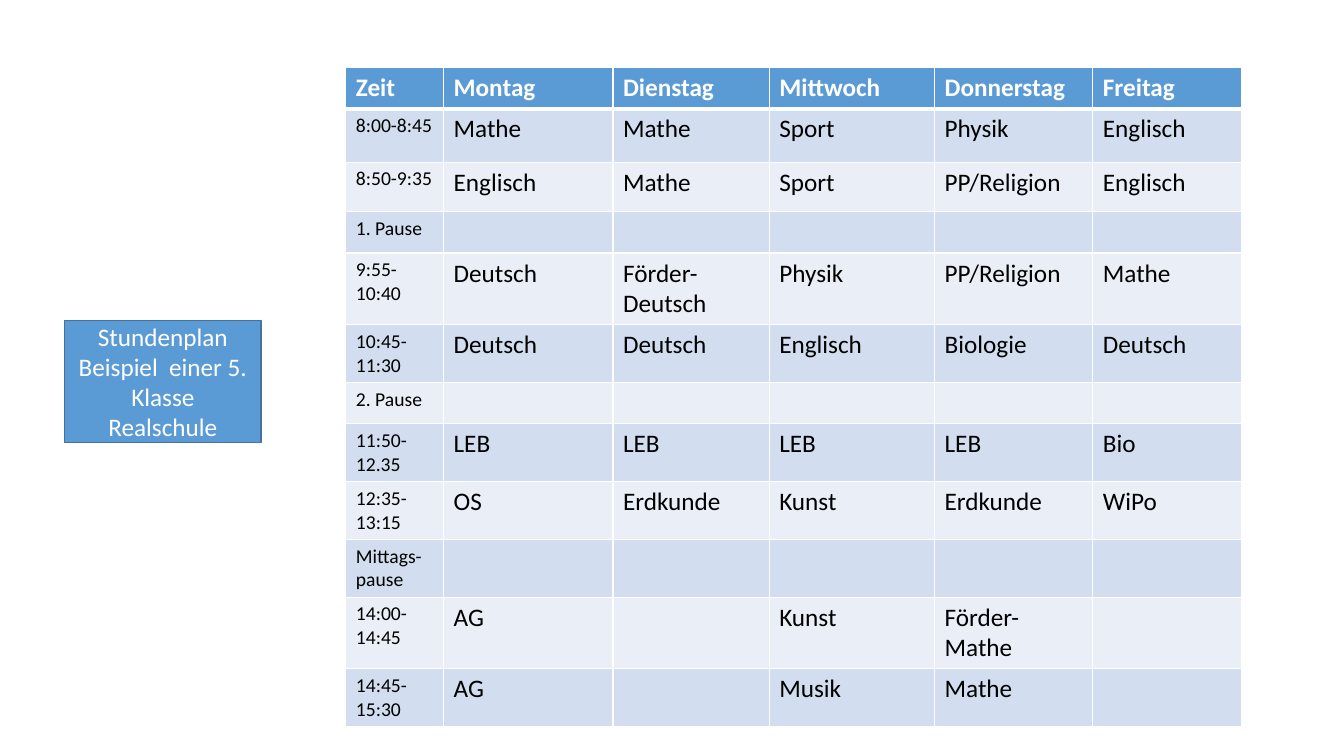
"""Build a weekly school timetable slide with a title box."""
from dataclasses import dataclass

import lxml.etree
import pptx
import pptx.dml.color
import pptx.enum.shapes
import pptx.enum.text
import pptx.oxml.ns
import pptx.util

Inches = pptx.util.Inches


@dataclass(frozen=True)
class Theme:
    font: str = "Calibri"
    accent: str = "5B9BD5"
    outline: str = "43739E"
    bands: tuple[str, str] = ("D2DEEF", "EAEFF7")
    light: str = "FFFFFF"
    dark: str = "000000"
    body_size: int = 18
    time_size: int = 14
    thin: int = 1
    thick: int = 3


@dataclass(frozen=True)
class Period:
    time: str
    subjects: tuple[str, ...] = ("",) * 5
    height: float = 0.41


THEME = Theme()
DAYS = ("Zeit", "Montag", "Dienstag", "Mittwoch", "Donnerstag", "Freitag")
COLUMN_WIDTHS = (0.97, 1.68, 1.55, 1.64, 1.57, 1.48)
HEADER_HEIGHT = 0.41
PERIODS = (
    Period("8:00-8:45", ("Mathe", "Mathe", "Sport", "Physik", "Englisch"), 0.53),
    Period("8:50-9:35", ("Englisch", "Mathe", "Sport", "PP/Religion", "Englisch"), 0.49),
    Period("1. Pause"),
    Period("9:55-10:40", ("Deutsch", "Förder-Deutsch", "Physik", "PP/Religion", "Mathe"), 0.53),
    Period("10:45-11:30", ("Deutsch", "Deutsch", "Englisch", "Biologie", "Deutsch")),
    Period("2. Pause"),
    Period("11:50-12.35", ("LEB", "LEB", "LEB", "LEB", "Bio")),
    Period("12:35-13:15", ("OS", "Erdkunde", "Kunst", "Erdkunde", "WiPo")),
    Period("Mittags-pause"),
    Period("14:00-14:45", ("AG", "", "Kunst", "Förder-Mathe", "")),
    Period("14:45-15:30", ("AG", "", "Musik", "Mathe", "")),
)


def rgb(value: str) -> pptx.dml.color.RGBColor:
    return pptx.dml.color.RGBColor.from_string(value)


def add_run(p, text: str, size: int, color: str, bold: bool = False) -> None:
    r = p.add_run()
    r.text = text
    r.font.name = THEME.font
    r.font.size = pptx.util.Pt(size)
    r.font.bold = bold
    r.font.color.rgb = rgb(color)


def add_borders(cell, top: int, bottom: int) -> None:
    qn = pptx.oxml.ns.qn
    tc_pr = cell._tc.get_or_add_tcPr()
    widths = {"a:lnL": THEME.thin, "a:lnR": THEME.thin, "a:lnT": top, "a:lnB": bottom}
    for tag, width in widths.items():
        ln = lxml.etree.SubElement(tc_pr, qn(tag), w=str(pptx.util.Pt(width)))
        fill = lxml.etree.SubElement(ln, qn("a:solidFill"))
        lxml.etree.SubElement(fill, qn("a:srgbClr"), val=THEME.light)


def fill_cell(cell, text: str, row: int, col: int) -> None:
    header = row == 0
    add_borders(
        cell,
        top=THEME.thick if row == 1 else THEME.thin,
        bottom=THEME.thick if header else THEME.thin,
    )
    cell.fill.solid()
    cell.fill.fore_color.rgb = rgb(THEME.accent if header else THEME.bands[(row - 1) % 2])
    if text:
        size = THEME.time_size if col == 0 and not header else THEME.body_size
        color = THEME.light if header else THEME.dark
        add_run(cell.text_frame.paragraphs[0], text, size, color, header)


def add_timetable(s) -> None:
    rows = [DAYS] + [(period.time, *period.subjects) for period in PERIODS]
    heights = [HEADER_HEIGHT] + [period.height for period in PERIODS]
    table = s.shapes.add_table(
        len(rows), len(DAYS), Inches(3.43), Inches(0.67),
        Inches(sum(COLUMN_WIDTHS)), Inches(sum(heights)),
    ).table
    for column, width in zip(table.columns, COLUMN_WIDTHS):
        column.width = Inches(width)
    for i, (texts, height) in enumerate(zip(rows, heights)):
        table.rows[i].height = Inches(height)
        for j, text in enumerate(texts):
            fill_cell(table.cell(i, j), text, i, j)


def add_title_box(s) -> None:
    sp = s.shapes.add_shape(
        pptx.enum.shapes.MSO_SHAPE.RECTANGLE,
        Inches(0.64), Inches(3.18), Inches(1.95), Inches(1.21),
    )
    sp.shadow.inherit = False
    sp.fill.solid()
    sp.fill.fore_color.rgb = rgb(THEME.accent)
    sp.line.color.rgb = rgb(THEME.outline)
    sp.line.width = pptx.util.Pt(THEME.thin)
    tf = sp.text_frame
    tf.word_wrap = True
    tf.vertical_anchor = pptx.enum.text.MSO_ANCHOR.MIDDLE
    p = tf.paragraphs[0]
    p.alignment = pptx.enum.text.PP_ALIGN.CENTER
    add_run(p, "Stundenplan Beispiel  einer 5. Klasse Realschule", THEME.body_size, THEME.light)


def main() -> None:
    prs = pptx.Presentation()
    prs.slide_width = Inches(13.33)
    prs.slide_height = Inches(7.5)
    s = prs.slides.add_slide(prs.slide_layouts[6])
    add_timetable(s)
    add_title_box(s)
    prs.save("out.pptx")


if __name__ == "__main__":
    main()
